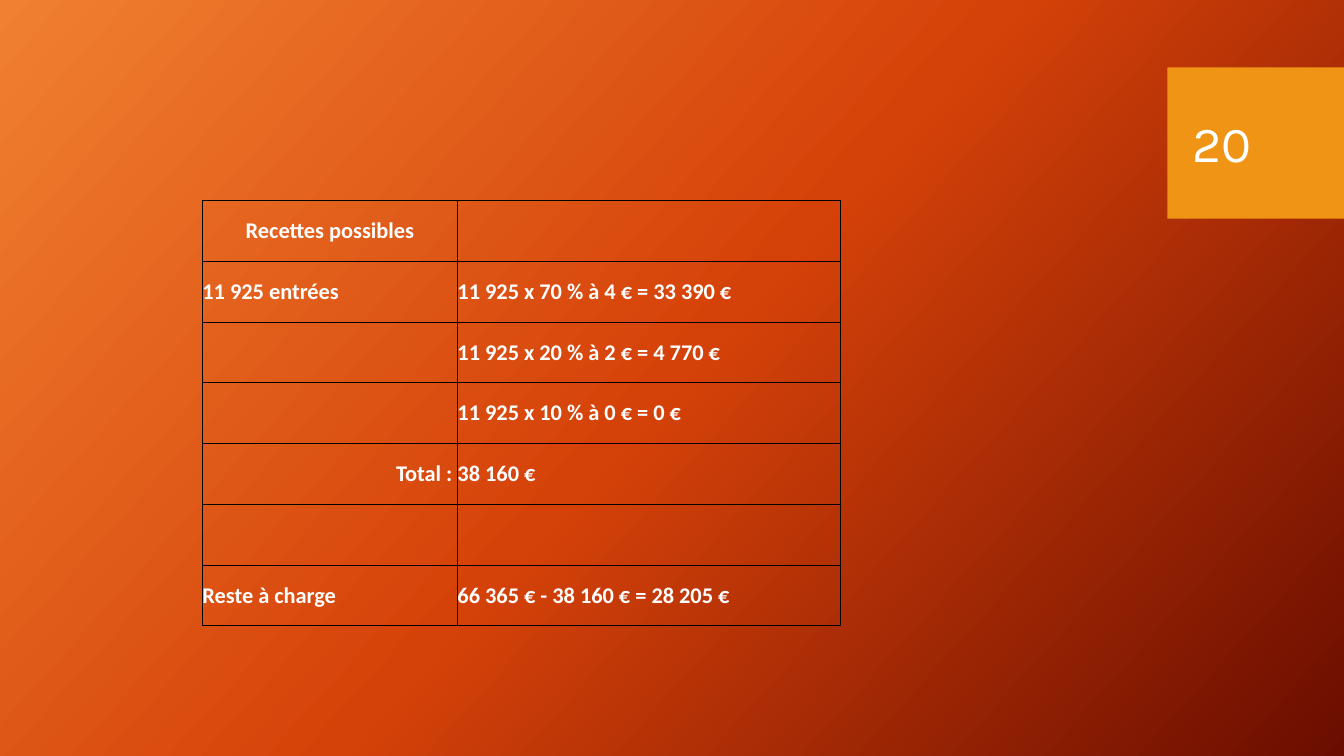
"""Build the slide with the table of possible receipts."""
from copy import deepcopy
from dataclasses import dataclass

from lxml.etree import SubElement
from pptx import Presentation
from pptx.dml.color import RGBColor
from pptx.enum.shapes import MSO_SHAPE
from pptx.enum.text import MSO_ANCHOR, PP_ALIGN
from pptx.oxml.ns import qn
from pptx.util import Pt


@dataclass(frozen=True)
class Theme:
    background: tuple = ("F18031", "D54209", "6A0D00")
    accent: str = "F09415"
    text: str = "FFFFFF"
    border: str = "000000"
    border_width: float = 0.5
    table_font: str = "Calibri"
    table_size: int = 16
    number_font: str = "Karla"
    number_size: int = 36


THEME = Theme()
COLUMN_WIDTHS = (182.2, 273.4)
ROW_HEIGHT = 43.4
RECEIPTS = (
    ("Recettes possibles", ""),
    ("11 925 entrées", "11 925 x 70 % à 4 € = 33 390 €"),
    ("", "11 925 x 20 % à 2 € = 4 770 €"),
    ("", "11 925 x 10 % à 0 € = 0 €"),
    ("Total : ", "38 160 €"),
    ("", ""),
    ("Reste à charge", "66 365 € - 38 160 € = 28 205 €"),
)
ALIGNMENTS = {"Recettes possibles": PP_ALIGN.CENTER, "Total : ": PP_ALIGN.RIGHT}


def paint_background(page):
    fill = page.background.fill
    fill.gradient()
    fill.gradient_angle = 318
    stop_list = page.element.find(".//" + qn("a:gsLst"))
    stop_list.insert(1, deepcopy(stop_list[0]))
    for index, (stop, color) in enumerate(zip(fill.gradient_stops, THEME.background)):
        stop.position = index / 2
        stop.color.rgb = RGBColor.from_string(color)


def style_text(para, font_name, size, bold=False):
    for span in para.runs:
        span.font.name = font_name
        span.font.size = Pt(size)
        span.font.bold = bold
        span.font.color.rgb = RGBColor.from_string(THEME.text)


def add_number_panel(page):
    panel = page.shapes.add_shape(
        MSO_SHAPE.RECTANGLE, Pt(833.8), Pt(48.2), Pt(126.2), Pt(108))
    panel.shadow.inherit = False
    panel.fill.solid()
    panel.fill.fore_color.rgb = RGBColor.from_string(THEME.accent)
    panel.line.fill.background()


def add_page_number(page, number):
    box = page.shapes.add_textbox(Pt(844.6), Pt(59), Pt(90.7), Pt(85.7))
    frame = box.text_frame
    frame.word_wrap = True
    frame.vertical_anchor = MSO_ANCHOR.MIDDLE
    frame.text = number
    style_text(frame.paragraphs[0], THEME.number_font, THEME.number_size)


def add_borders(cell):
    properties = cell._tc.get_or_add_tcPr()
    for position, side in enumerate(("a:lnL", "a:lnR", "a:lnT", "a:lnB")):
        line = SubElement(properties, qn(side), w=str(Pt(THEME.border_width)))
        fill = SubElement(line, qn("a:solidFill"))
        SubElement(fill, qn("a:srgbClr"), val=THEME.border)
        properties.insert(position, line)


def fill_cell(cell, text):
    cell.margin_left = cell.margin_right = cell.margin_top = cell.margin_bottom = 0
    cell.vertical_anchor = MSO_ANCHOR.MIDDLE
    cell.fill.background()
    add_borders(cell)
    cell.text_frame.text = text
    para = cell.text_frame.paragraphs[0]
    para.alignment = ALIGNMENTS.get(text, PP_ALIGN.LEFT)
    style_text(para, THEME.table_font, THEME.table_size, bold=True)


def add_receipts_table(page):
    table = page.shapes.add_table(
        len(RECEIPTS), len(COLUMN_WIDTHS), Pt(144.6), Pt(143.2),
        Pt(sum(COLUMN_WIDTHS)), Pt(ROW_HEIGHT * len(RECEIPTS))).table
    table.first_row = table.horz_banding = False
    for column, width in zip(table.columns, COLUMN_WIDTHS):
        column.width = Pt(width)
    for row, texts in zip(table.rows, RECEIPTS):
        row.height = Pt(ROW_HEIGHT)
        for cell, text in zip(row.cells, texts):
            fill_cell(cell, text)


def main():
    deck = Presentation()
    deck.slide_width, deck.slide_height = Pt(960), Pt(540)
    page = deck.slides.add_slide(deck.slide_layouts[6])
    paint_background(page)
    add_number_panel(page)
    add_receipts_table(page)
    add_page_number(page, "20")
    deck.save("out.pptx")


if __name__ == "__main__":
    main()
